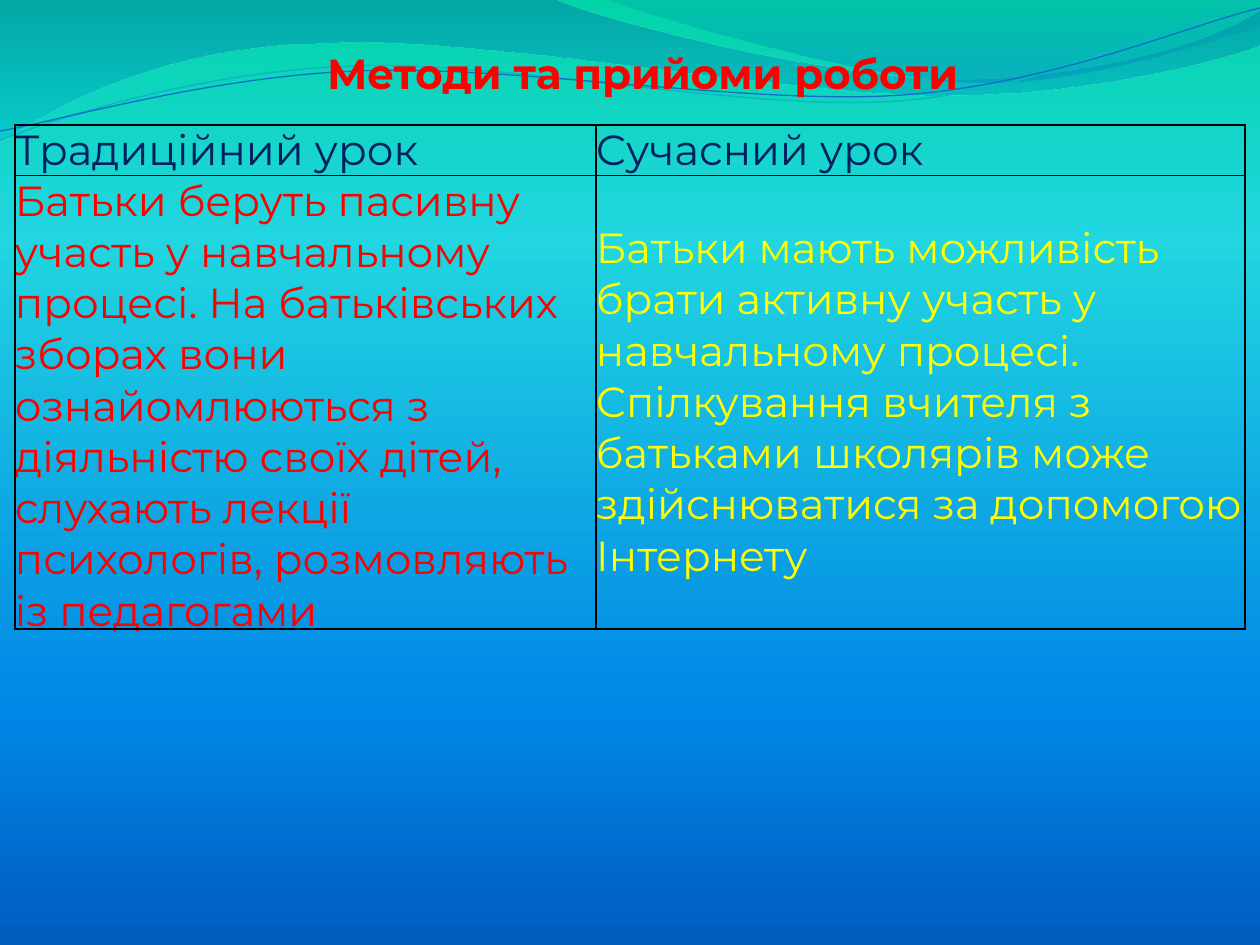
from dataclasses import dataclass

from lxml.etree import SubElement
from pptx import Presentation
from pptx.dml.color import RGBColor as RGB
from pptx.enum.text import MSO_ANCHOR as Anchor, MSO_AUTO_SIZE as AutoSize, PP_ALIGN as Align
from pptx.oxml.ns import qn
from pptx.util import Pt

PX = 914400 / 126


@dataclass(frozen=True)
class Theme:
    font: str = "Montserrat"
    size: int = 24
    title: str = "FF0000"
    header: str = "002060"
    traditional: str = "FF0000"
    modern: str = "FFFF00"
    border: str = "000000"
    border_width: int = 1
    background: tuple = ((0, "03D4A8", 100), (25, "21D6E0", 100),
                         (75, "0087E6", 100), (100, "005CBF", 100))
    wide_wave: tuple = ((0, "0074A1", 45), (100, "00C6CF", 55))
    corner_wave: tuple = ((0, "00A1A9", 30), (80, "008BBF", 45))
    light_line: tuple = ("0AB8BF", 0.85)
    dark_line: tuple = ("0F6FC6", 0.75)


T = Theme()

WIDE_WAVE = [(0, 0), (554, -1), (600, 21, 837, 79, 955, 79),
             (1075, 79, 1207, 47, 1260, 11), (1261, 45),
             (1239, 55, 1096, 96, 940, 95), (784, 95, 481, 35, 324, 43),
             (163, 45, 58, 105, -1, 142)]
CORNER_WAVE = [(604, -1), (642, 14, 859, 78, 969, 82),
               (1079, 87, 1211, 40, 1260, 26), (1260, 0)]
LIGHT_LINE = [(0, 140), (60, 117, 199, 72, 349, 66),
              (498, 59, 747, 112, 898, 101), (1050, 89, 1182, 19, 1257, -3)]
DARK_LINE = [(0, 131), (59, 121, 207, 77, 357, 71),
             (508, 64, 752, 106, 903, 95), (1053, 84, 1186, 26, 1260, 8)]

ROWS = [
    [("Традиційний урок", T.header), ("Сучасний урок", T.header)],
    [("Батьки беруть пасивну участь у навчальному процесі. На батьківських "
      "зборах вони ознайомлюються з діяльністю своїх дітей, слухають лекції "
      "психологів, розмовляють із педагогами", T.traditional),
     ("Батьки мають можливість брати активну участь у навчальному процесі. "
      "Спілкування вчителя з батьками школярів може здійснюватися за "
      "допомогою Інтернету", T.modern)],
]


def px(n):
    return round(n * PX)


def apply(obj, values):
    for name, value in values.items():
        setattr(obj, name, value)


def set_gradient(fill, parent, stops):
    fill.gradient()
    grad = parent.find(qn("a:gradFill"))
    grad.clear()
    gs_list = SubElement(grad, qn("a:gsLst"))
    for pos, color, opacity in stops:
        gs = SubElement(gs_list, qn("a:gs"), pos=str(pos * 1000))
        clr = SubElement(gs, qn("a:srgbClr"), val=color)
        if opacity < 100:
            SubElement(clr, qn("a:alpha"), val=str(opacity * 1000))
    SubElement(grad, qn("a:lin"), ang="5400000", scaled="0")


def bend(sp, segments):
    lines = iter(list(sp._element.iter(qn("a:lnTo"))))
    for seg in segments[1:]:
        line = next(lines)
        if len(seg) == 6:
            curve = line.makeelement(qn("a:cubicBezTo"))
            line.addprevious(curve)
            for part in (line, next(lines), next(lines)):
                curve.append(part[0])
                part.getparent().remove(part)


def add_path(slide, segments, close):
    points = [(px(seg[i]), px(seg[i + 1]))
              for seg in segments for i in range(0, len(seg), 2)]
    builder = slide.shapes.build_freeform(*points[0])
    builder.add_line_segments(points[1:], close=close)
    sp = builder.convert_to_shape()
    bend(sp, segments)
    sp.shadow.inherit = False
    return sp


def add_wave(slide, segments, stops):
    sp = add_path(slide, segments, True)
    set_gradient(sp.fill, sp._element.spPr, stops)
    sp.line.fill.background()


def add_curve(slide, segments, style):
    color, width = style
    sp = add_path(slide, segments, False)
    sp.fill.background()
    sp.line.color.rgb = RGB.from_string(color)
    sp.line.width = Pt(width)


def write(p, text, color, bold=False):
    r = p.add_run()
    r.text = text
    apply(r.font, {"name": T.font, "size": Pt(T.size), "bold": bold})
    r.font.color.rgb = RGB.from_string(color)


def set_title(slide, text):
    sp = slide.shapes.title
    slide.shapes._spTree.append(sp._element)
    apply(sp, {"left": px(308), "top": px(16), "width": px(669), "height": px(81)})
    tf = sp.text_frame
    apply(tf, {"word_wrap": False, "auto_size": AutoSize.SHAPE_TO_FIT_TEXT,
               "vertical_anchor": Anchor.TOP})
    p = tf.paragraphs[0]
    apply(p, {"alignment": Align.CENTER, "line_spacing": 1.5})
    write(p, text, T.title, True)


def set_borders(cell):
    tc_pr = cell._tc.get_or_add_tcPr()
    for i, side in enumerate(("lnL", "lnR", "lnT", "lnB")):
        ln = tc_pr.makeelement(qn(f"a:{side}"), {"w": str(Pt(T.border_width))})
        fill = SubElement(ln, qn("a:solidFill"))
        SubElement(fill, qn("a:srgbClr"), val=T.border)
        tc_pr.insert(i, ln)


def add_comparison(slide, rows, left, top, widths, heights, total):
    frame = slide.shapes.add_table(len(rows), len(widths), px(left), px(top),
                                   px(sum(widths)), px(total))
    table = frame.table
    apply(table, {"first_row": False, "horz_banding": False})
    for col, width in zip(table.columns, widths):
        col.width = px(width)
    for row, height, content in zip(table.rows, heights, rows):
        row.height = px(height)
        for cell, (text, color) in zip(row.cells, content):
            apply(cell, {"margin_left": 0, "margin_right": 0, "margin_top": 0,
                         "margin_bottom": 0, "vertical_anchor": Anchor.MIDDLE})
            cell.fill.background()
            set_borders(cell)
            write(cell.text_frame.paragraphs[0], text, color)
    frame.height = px(total)


def main():
    prs = Presentation()
    apply(prs, {"slide_width": px(1260), "slide_height": px(945)})
    slide = prs.slides.add_slide(prs.slide_layouts[5])
    bg_fill = slide.background.fill
    set_gradient(bg_fill, slide._element.cSld.bg.bgPr, T.background)
    add_wave(slide, WIDE_WAVE, T.wide_wave)
    add_wave(slide, CORNER_WAVE, T.corner_wave)
    add_curve(slide, LIGHT_LINE, T.light_line)
    add_curve(slide, DARK_LINE, T.dark_line)
    set_title(slide, "Методи та прийоми роботи")
    add_comparison(slide, ROWS, 15, 125, (581, 649), (18, 88), 554)
    prs.save("out.pptx")


if __name__ == "__main__":
    main()
